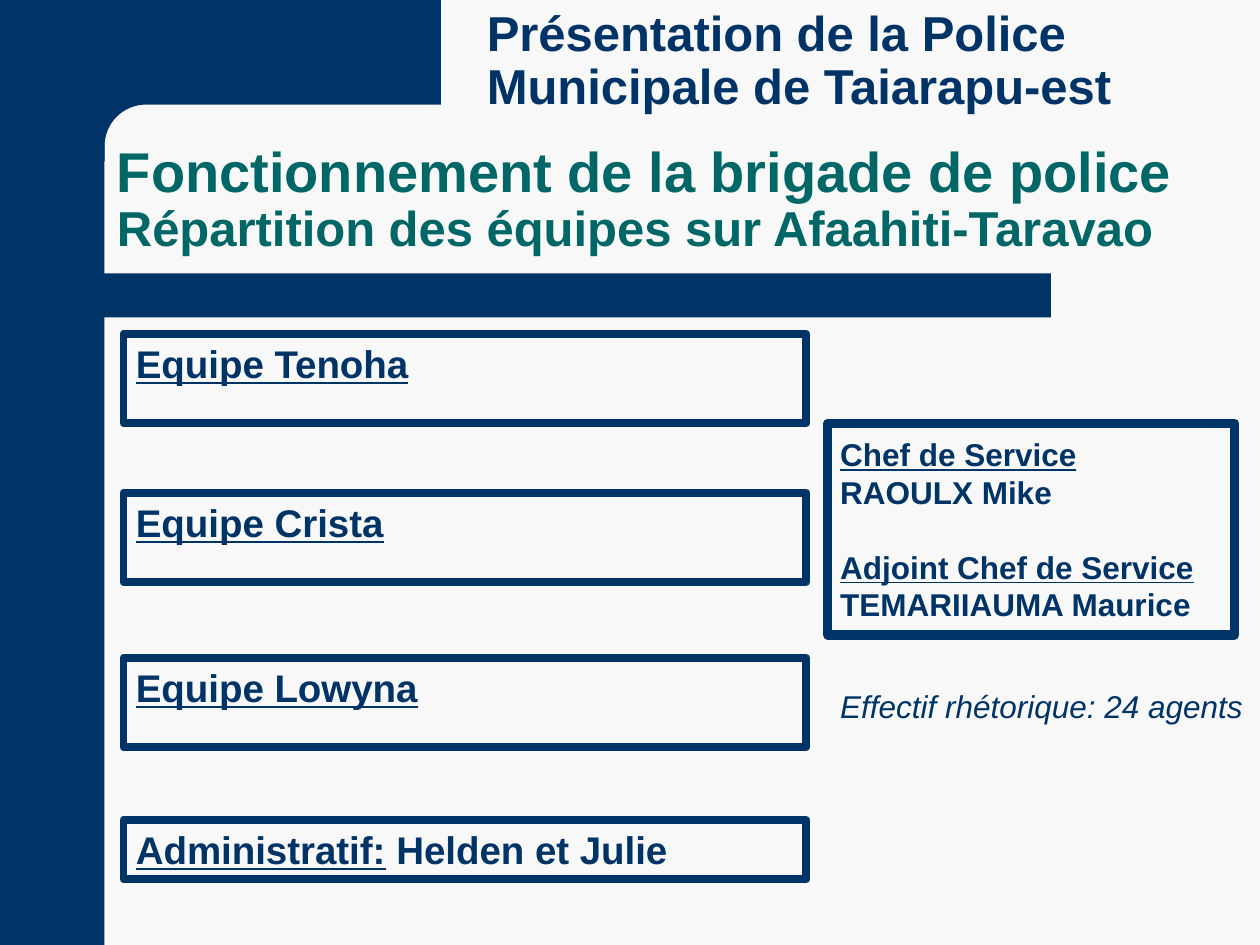
from dataclasses import dataclass
from math import cos, pi, sin

from pptx import Presentation
from pptx.dml.color import RGBColor
from pptx.enum import shapes, text
from pptx.util import Inches, Pt


@dataclass(frozen=True)
class Theme:
    navy: RGBColor = RGBColor(0x00, 0x33, 0x66)
    teal: RGBColor = RGBColor(0x00, 0x66, 0x66)
    paper: RGBColor = RGBColor(0xF8, 0xF8, 0xF8)
    font: str = "Arial"
    title: int = 32
    head: int = 28
    team: int = 22
    note: int = 18


@dataclass(frozen=True)
class Run:
    words: str
    size: int
    color: RGBColor
    bold: bool = True
    under: bool = False
    slant: bool = False


@dataclass(frozen=True)
class Para:
    runs: list[Run]
    before: int = 0
    pitch: float = 1.0


@dataclass(frozen=True)
class Box:
    left: float
    top: float
    width: float
    height: float
    paras: list[Para]
    line: float = 0
    anchor: text.MSO_ANCHOR = text.MSO_ANCHOR.TOP
    wrap: bool = True
    round: float = 0


THEME = Theme()
KIND = shapes.MSO_SHAPE


def paint(shape) -> None:
    shape.shadow.inherit = False
    shape.fill.solid()
    shape.fill.fore_color.rgb = THEME.navy
    shape.line.fill.background()


def band(slide, left: float, top: float, width: float, height: float) -> None:
    paint(slide.shapes.add_shape(KIND.RECTANGLE, Inches(left), Inches(top),
                                 Inches(width), Inches(height)))


def corner(slide) -> None:
    """Draw the top block whose inner corner is a concave quarter circle."""
    mid, radius, steps = 1.16, 0.33, 16
    turns = [pi / 2 * n / steps for n in range(steps + 1)]
    arc = [(mid - radius * sin(t), mid - radius * cos(t)) for t in turns]
    points = [(3.5, 0.83), *arc, (0.83, 1.28), (0.5, 1.28), (0.5, 0)]
    pen = slide.shapes.build_freeform(Inches(3.5), 0)
    pen.add_line_segments([(Inches(x), Inches(y)) for x, y in points])
    paint(pen.convert_to_shape())


def write(para, run: Run) -> None:
    part = para.add_run()
    part.text = run.words
    font = part.font
    font.name, font.size = THEME.font, Pt(run.size)
    font.bold, font.italic, font.underline = run.bold, run.slant, run.under
    font.color.rgb = run.color


def draw(slide, box: Box) -> None:
    place = [Inches(n) for n in (box.left, box.top, box.width, box.height)]
    if box.line or box.round:
        kind = KIND.ROUNDED_RECTANGLE if box.round else KIND.RECTANGLE
        shape = slide.shapes.add_shape(kind, *place)
        shape.shadow.inherit = False
        shape.fill.background()
        if box.round:
            shape.adjustments[0] = box.round
        if box.line:
            shape.line.color.rgb = THEME.navy
            shape.line.width = Pt(box.line)
        else:
            shape.line.fill.background()
    else:
        shape = slide.shapes.add_textbox(*place)
    frame = shape.text_frame
    frame.word_wrap = box.wrap
    frame.vertical_anchor = box.anchor
    for n, item in enumerate(box.paras):
        para = frame.add_paragraph() if n else frame.paragraphs[0]
        para.alignment = text.PP_ALIGN.LEFT
        para.line_spacing = item.pitch
        para.space_before = Pt(item.before)
        for run in item.runs:
            write(para, run)


def team(top: float, name: str, rest: str = "", height: float = 0.71) -> Box:
    runs = [Run(name, THEME.team, THEME.navy, under=True)]
    if rest:
        runs.append(Run(rest, THEME.team, THEME.navy))
    return Box(0.98, top, 5.42, height, [Para(runs)], line=4.5)


def post(role: str, name: str, before: int = 0) -> list[Para]:
    return [Para([Run(role, THEME.note, THEME.navy, under=True)], before),
            Para([Run(name, THEME.note, THEME.navy)])]


def main() -> None:
    deck = Presentation()
    deck.slide_width, deck.slide_height = Inches(10), Inches(7.5)
    slide = deck.slides.add_slide(deck.slide_layouts[6])
    slide.background.fill.solid()
    slide.background.fill.fore_color.rgb = THEME.paper

    band(slide, 0, 0, 0.83, 7.5)
    corner(slide)
    band(slide, 0.67, 2.17, 7.67, 0.35)

    title = [
        Para([Run("Fonctionnement de la brigade de police",
                  THEME.title, THEME.teal)], pitch=0.9),
        Para([Run("Répartition des équipes sur Afaahiti-Taravao",
                  THEME.head, THEME.teal)], pitch=0.9),
    ]
    head = [Para([Run("Présentation de la Police Municipale de Taiarapu-est",
                      THEME.head, THEME.navy)], pitch=0.9)]
    chiefs = (post("Chef de Service", "RAOULX Mike")
              + post("Adjoint Chef de Service", "TEMARIIAUMA Maurice", before=21))
    count = [Para([Run("Effectif rhétorique: 24 agents", THEME.note,
                       THEME.navy, bold=False, slant=True)])]

    boxes = [
        Box(0.83, 0.91, 9.17, 1.18, title, anchor=text.MSO_ANCHOR.BOTTOM),
        Box(3.62, 0, 6.38, 0.99, head, anchor=text.MSO_ANCHOR.MIDDLE, round=0.5),
        team(2.65, "Equipe Tenoha"),
        team(3.91, "Equipe Crista"),
        team(5.22, "Equipe Lowyna"),
        team(6.51, "Administratif:", " Helden et Julie", height=0.47),
        Box(6.57, 3.36, 3.23, 1.68, chiefs, line=5.25,
            anchor=text.MSO_ANCHOR.MIDDLE),
        Box(6.57, 5.4, 3.43, 0.4, count, wrap=False),
    ]
    for box in boxes:
        draw(slide, box)
    deck.save("out.pptx")


if __name__ == "__main__":
    main()
